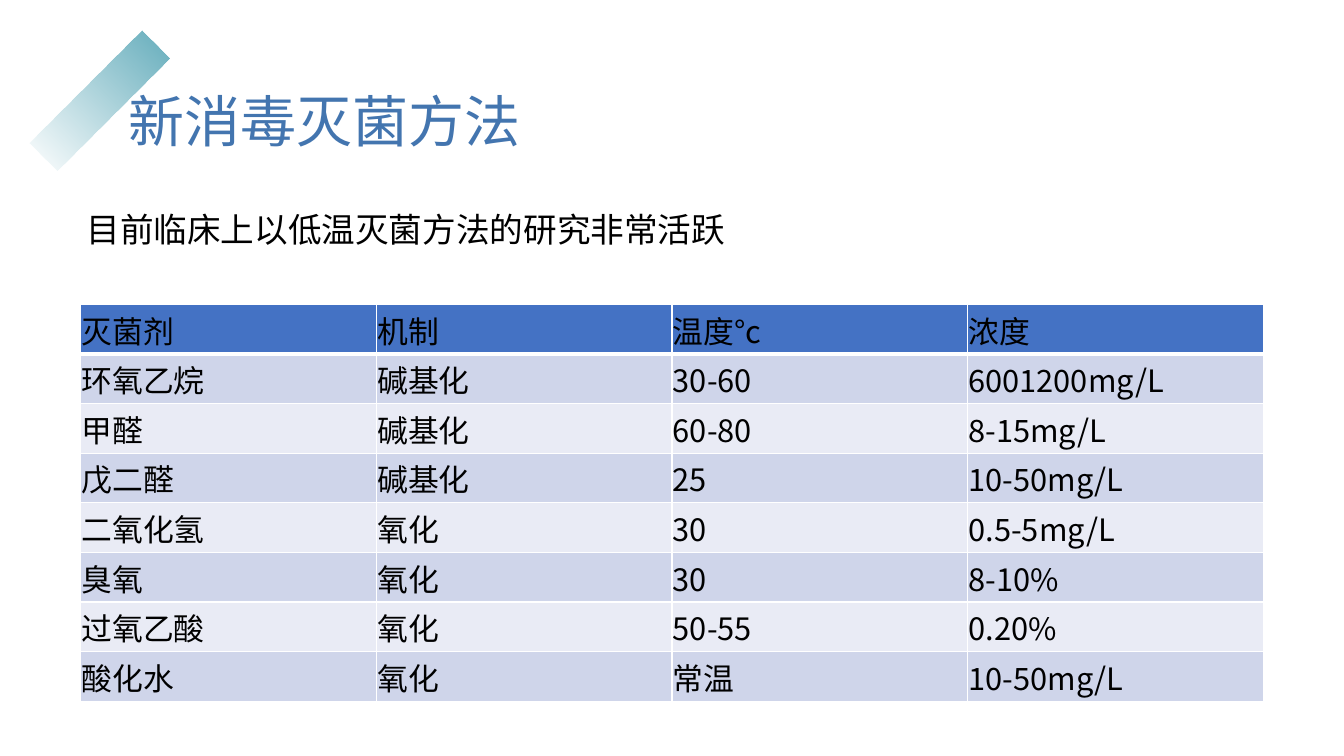
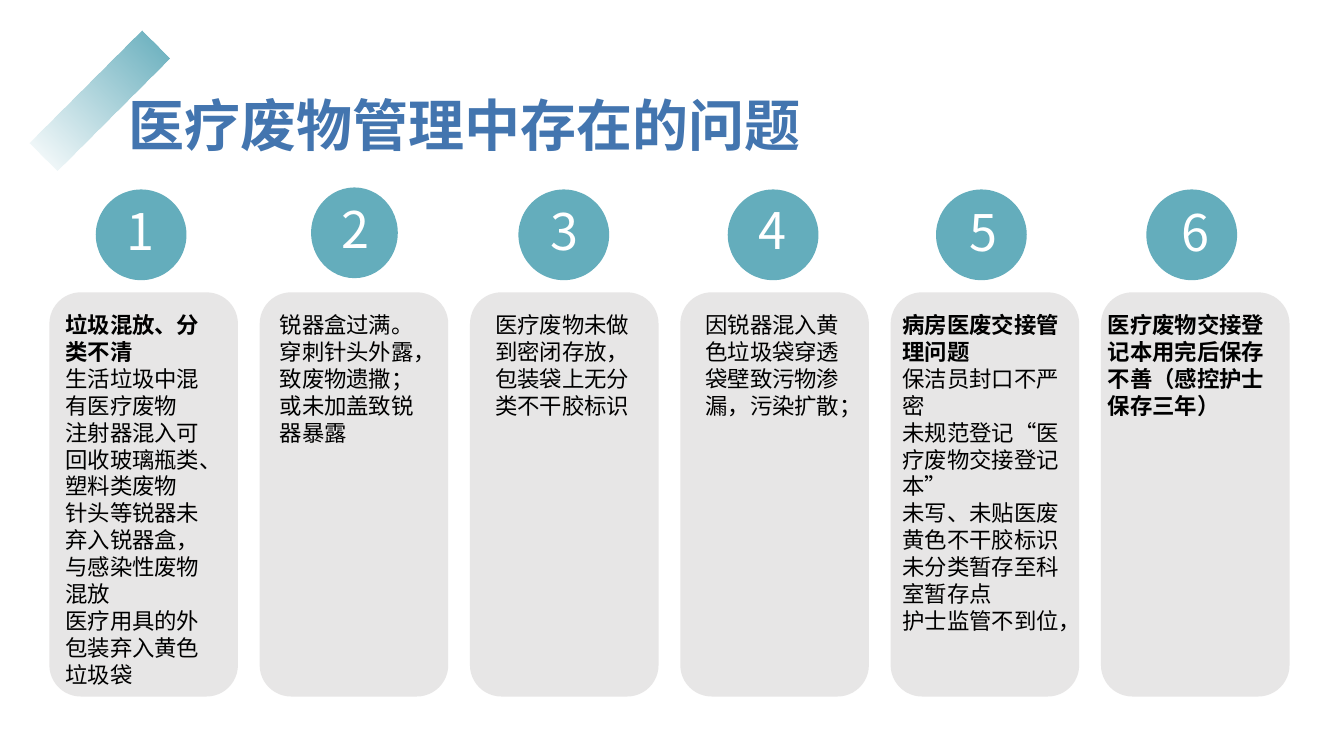
from lxml import etree
from pptx import Presentation
from pptx.dml.color import RGBColor
from pptx.enum.shapes import MSO_SHAPE
from pptx.enum.text import MSO_ANCHOR, PP_ALIGN
from pptx.oxml.ns import qn
from pptx.util import Emu, Pt

RECT, ROUND, OVAL = MSO_SHAPE.RECTANGLE, MSO_SHAPE.ROUNDED_RECTANGLE, MSO_SHAPE.OVAL
TOP, MIDDLE = MSO_ANCHOR.TOP, MSO_ANCHOR.MIDDLE
LEFT, CENTER = PP_ALIGN.LEFT, PP_ALIGN.CENTER

PX = 9144  # 100 px to the inch
FONT = "Noto Sans CJK SC"
TEAL, TITLE_BLUE, CARD_GREY = "64ADBC", "4375AF", "E7E6E6"
HEADER_FILL, BAND_FILLS = "4472C4", ("CFD5EA", "E9EBF5")
BLACK, WHITE = "000000", "FFFFFF"

AGENTS = [
    ("灭菌剂", "机制", "温度°c", "浓度"),
    ("环氧乙烷", "碱基化", "30-60", "6001200mg/L"),
    ("甲醛", "碱基化", "60-80", "8-15mg/L"),
    ("戊二醛", "碱基化", "25", "10-50mg/L"),
    ("二氧化氢", "氧化", "30", "0.5-5mg/L"),
    ("臭氧", "氧化", "30", "8-10%"),
    ("过氧乙酸", "氧化", "50-55", "0.20%"),
    ("酸化水", "氧化", "常温", "10-50mg/L"),
]

# Per card: circle (dx, y, width), number (dx, y), text (dx, width),
# bold heading or None, plain paragraphs
PROBLEMS = [
    ((46, 188, 90), (65, 194), (6, 165), "垃圾混放、分类不清",
     ["生活垃圾中混有医疗废物", "注射器混入可回收玻璃瓶类、塑料类废物",
      "针头等锐器未弃入锐器盒，与感染性废物混放", "医疗用具的外包装弃入黄色垃圾袋"]),
    ((51, 186, 86), (70, 192), (10, 174), None,
     ["锐器盒过满。穿刺针头外露，致废物遗撒；或未加盖致锐器暴露"]),
    ((48, 188, 90), (69, 194), (15, 174), None,
     ["医疗废物未做到密闭存放，包装袋上无分类不干胶标识"]),
    ((47, 188, 90), (66, 193), (15, 160), None,
     ["因锐器混入黄色垃圾袋穿透袋壁致污物渗漏，污染扩散；"]),
    ((45, 188, 90), (67, 195), (2, 196), "病房医废交接管理问题",
     ["保洁员封口不严密", "未规范登记“医疗废物交接登记本”", "未写、未贴医废黄色不干胶标识",
      "未分类暂存至科室暂存点", "护士监管不到位，"]),
    ((45, 188, 90), (69, 195), (-3, 187),
     "医疗废物交接登记本用完后保存不善（感控护士保存三年）", []),
]


def px(n):
    return Emu(round(n * PX))


def rgb(color):
    return RGBColor.from_string(color)


def style(p, size, color, bold=False, align=LEFT, spacing=None):
    p.alignment = align
    if spacing:
        p.line_spacing = spacing
    for r in p.runs:
        r.font.size = Pt(size)
        r.font.bold = bold
        r.font.color.rgb = rgb(color)
        r.font.name = FONT
        ea = etree.SubElement(r.font._element, qn("a:ea"))
        ea.set("typeface", FONT)


def add_text(slide, box, paragraphs, size, color, bold=0, wrap=True, anchor=TOP,
             align=LEFT, spacing=None):
    """Place a text box whose first `bold` paragraphs are bold."""
    tf = slide.shapes.add_textbox(*map(px, box)).text_frame
    tf.word_wrap = wrap
    tf.vertical_anchor = anchor
    tf.text = "\n".join(paragraphs)
    for i, p in enumerate(tf.paragraphs):
        style(p, size, color, i < bold, align, spacing)


def add_box(slide, kind, box, color):
    sp = slide.shapes.add_shape(kind, *map(px, box))
    sp.shadow.inherit = False
    sp.fill.solid()
    sp.fill.fore_color.rgb = rgb(color)
    sp.line.fill.background()
    return sp


def add_ribbon(slide):
    """Diagonal bar that fades out towards its lower end."""
    sp = add_box(slide, RECT, (20, 80, 157, 39), TEAL)
    sp.rotation = 315
    sp.fill.gradient()
    sp.fill.gradient_angle = 0
    for stop in sp.fill.gradient_stops:
        stop.color.rgb = rgb(TEAL)
    faded = next(sp._element.iter(qn("a:srgbClr")))
    etree.SubElement(faded, qn("a:alpha")).set("val", "0")


def new_slide(prs, title, box, bold=0):
    slide = prs.slides.add_slide(prs.slide_layouts[6])
    add_text(slide, box, [title], 40, TITLE_BLUE, bold, anchor=MIDDLE, spacing=0.9)
    return slide


def set_borders(cell, widths):
    tc_pr = cell._tc.get_or_add_tcPr()
    for side, width in zip("LRTB", widths):
        ln = etree.SubElement(tc_pr, qn("a:ln" + side))
        ln.set("w", str(Pt(width)))
        fill = etree.SubElement(ln, qn("a:solidFill"))
        etree.SubElement(fill, qn("a:srgbClr")).set("val", WHITE)


def add_agent_table(slide, box):
    rows, cols = len(AGENTS), len(AGENTS[0])
    table = slide.shapes.add_table(rows, cols, *map(px, box)).table
    for col in table.columns:
        col.width = px(box[2] / cols)
    for i, values in enumerate(AGENTS):
        table.rows[i].height = px(box[3] / rows)
        for j, value in enumerate(values):
            cell = table.cell(i, j)
            # The rule below the header is thicker than the others
            set_borders(cell, (1, 1, 3 if i == 1 else 1, 3 if i == 0 else 1))
            cell.fill.solid()
            cell.fill.fore_color.rgb = rgb(BAND_FILLS[(i - 1) % 2] if i else HEADER_FILL)
            cell.margin_left = cell.margin_right = cell.margin_top = px(1)
            cell.margin_bottom = 0
            cell.vertical_anchor = MIDDLE
            cell.text = value
            style(cell.text_frame.paragraphs[0], 22, BLACK)


def add_problem_card(slide, box, number, problem):
    (circle_dx, circle_y, circle_w), (num_dx, num_y), (text_dx, text_w), head, body = problem
    x, y, w, h = box
    add_box(slide, ROUND, box, CARD_GREY)
    add_text(slide, (x + text_dx, y + 14, text_w, h - 14),
             ([head] if head else []) + body, 16, BLACK, bold=1 if head else 0)
    add_box(slide, OVAL, (x + circle_dx, circle_y, circle_w, 90), TEAL)
    add_text(slide, (x + num_dx, num_y, 50, 71), [str(number)], 36, WHITE,
             wrap=False, align=CENTER)


def methods_slide(prs):
    slide = new_slide(prs, "新消毒灭菌方法", (118, 87, 483, 73))
    add_text(slide, (76, 207, 660, 46), ["目前临床上以低温灭菌方法的研究非常活跃"],
             24, BLACK, wrap=False, spacing=0.9)
    add_agent_table(slide, (80, 302, 1173, 394))
    add_ribbon(slide)


def problems_slide(prs):
    slide = new_slide(prs, "医疗废物管理中存在的问题", (118, 82, 734, 90), bold=1)
    left, right, card_w = 49, 1279, 187
    pitch = (right - left - card_w) / (len(PROBLEMS) - 1)
    for i, problem in enumerate(PROBLEMS):
        add_problem_card(slide, (left + i * pitch, 290, card_w, 401), i + 1, problem)
    add_ribbon(slide)


def main():
    prs = Presentation()
    prs.slide_width, prs.slide_height = px(1333), px(750)
    methods_slide(prs)
    problems_slide(prs)
    prs.save("out.pptx")


if __name__ == "__main__":
    main()
